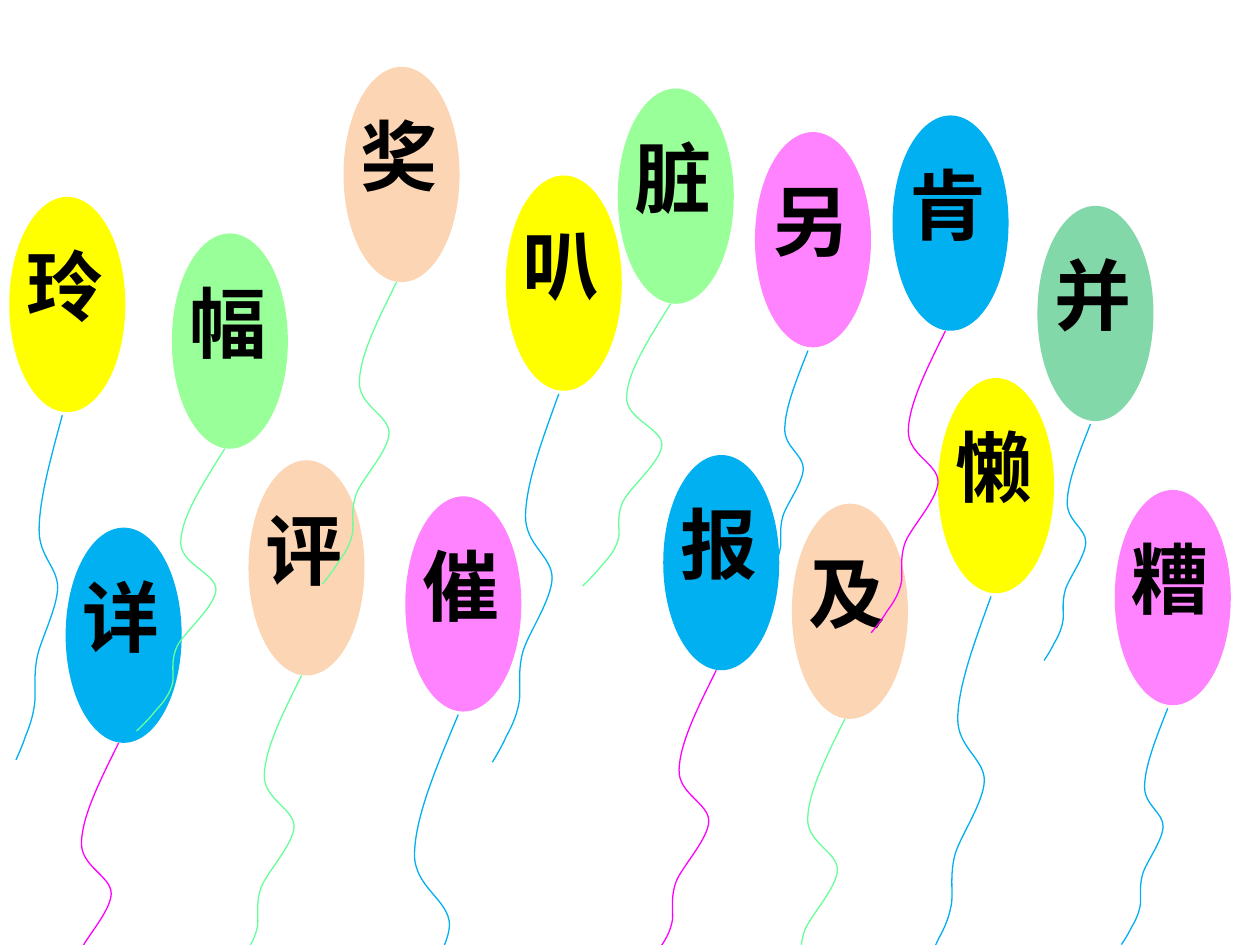
from dataclasses import dataclass

from lxml.etree import SubElement
from pptx import Presentation
from pptx.dml.color import RGBColor
from pptx.enum.shapes import MSO_SHAPE
from pptx.enum.text import MSO_AUTO_SIZE
from pptx.oxml.ns import qn
from pptx.slide import Slide
from pptx.util import Pt

COLORS = {
    "yellow": "FFFF00", "blue": "00B0F0", "peach": "FCD5B5", "lime": "99FF99",
    "magenta": "FF00FF", "green": "00B050", "mint": "66FF99", "black": "000000",
}
TRANSLUCENT = ("magenta", "green")
STRING_CURVE = [
    (1, 0), (0.76, 0.12), (0.51, 0.24), (0.5, 0.33), (0.49, 0.41), (0.9, 0.44), (0.9, 0.5),
    (0.89, 0.56), (0.54, 0.65), (0.46, 0.7), (0.37, 0.76), (0.44, 0.81), (0.4, 0.84),
    (0.36, 0.88), (0.27, 0.91), (0.21, 0.93), (0.14, 0.96), (0, 1), (0, 1),
]
STRINGS = {
    "short": (26.5, 135, 124.8), "narrow": (26.5, 197, 124.8), "long": (38, 210.5, 124.8),
    "longest": (50, 240.5, 124.8), "medium": (42.5, 172.6, 123), "wide": (50.4, 161.3, 123),
}
BALLOONS = [
    ("糟", 637, 280, "magenta", "short", "blue"),
    ("懒", 536, 216, "yellow", "long", "blue"),
    ("及", 452.5, 287.8, "peach", "medium", "mint"),
    ("肯", 510, 66, "blue", "medium", "magenta"),
    ("评", 142, 263, "peach", "medium", "mint"),
    ("详", 37.5, 301.5, "blue", "medium", "magenta"),
    ("催", 231.6, 283.6, "magenta", "longest", "blue"),
    ("并", 592.8, 117.6, "green", "short", "blue"),
    ("玲", 5.3, 112.5, "yellow", "narrow", "blue"),
    ("幅", 98.2, 133.4, "lime", "wide", "mint"),
    ("叭", 289, 100.3, "yellow", "long", "blue"),
    ("另", 431.4, 75.5, "magenta", "short", "blue"),
    ("脏", 353, 50.6, "lime", "wide", "mint"),
    ("奖", 196.3, 38.2, "peach", "medium", "mint"),
    ("报", 379, 260, "blue", "medium", "magenta"),
]


@dataclass
class BalloonPainter:
    """Draws balloons on a slide in one shared style."""

    page: Slide
    font: str = "Arial"
    size: float = 44
    width: float = 66.3
    height: float = 123
    knot: float = 30.3

    def ellipse(self, shapes, left, top, color):
        shape = shapes.add_shape(
            MSO_SHAPE.OVAL, Pt(left), Pt(top), Pt(self.width), Pt(self.height))
        shape.shadow.inherit = False
        shape.fill.solid()
        shape.fill.fore_color.rgb = RGBColor.from_string(COLORS[color])
        shape.line.fill.background()
        if color in TRANSLUCENT:
            tint = shape._element.spPr.find(qn("a:solidFill"))[0]
            SubElement(tint, qn("a:alpha"), val="49000")

    def character(self, shapes, left, top, text):
        box = shapes.add_textbox(Pt(left), Pt(top), Pt(85), Pt(60.5))
        frame = box.text_frame
        frame.word_wrap = True
        frame.auto_size = MSO_AUTO_SIZE.SHAPE_TO_FIT_TEXT
        para = frame.paragraphs[0]
        para.text = text
        para.font.name = self.font
        para.font.size = Pt(self.size)
        para.font.bold = True
        para.font.color.rgb = RGBColor.from_string(COLORS["black"])

    def string(self, shapes, left, top, width, height, color):
        points = [(Pt(left + x * width), Pt(top + y * height)) for x, y in STRING_CURVE]
        builder = shapes.build_freeform(*points[0])
        builder.add_line_segments(points[1:], close=False)
        shape = builder.convert_to_shape()
        shape.shadow.inherit = False
        shape.fill.background()
        shape.line.color.rgb = RGBColor.from_string(COLORS[color])
        shape.line.width = Pt(0.75)
        self.bend(shape)

    def bend(self, shape):
        outline = next(shape._element.iter(qn("a:path")))
        lines = outline.findall(qn("a:lnTo"))
        for start in range(0, len(lines), 3):
            curve = SubElement(outline, qn("a:cubicBezTo"))
            for line in lines[start:start + 3]:
                curve.append(line[0])
                outline.remove(line)

    def balloon(self, text, left, top, color, string, string_color):
        shapes = self.page.shapes.add_group_shape().shapes
        width, height, drop = STRINGS[string]
        self.ellipse(shapes, left, top, color)
        self.character(shapes, left + 2.7, top + 20.4, text)
        self.string(shapes, left + self.knot - width, top + drop, width, height, string_color)


def main():
    deck = Presentation()
    deck.slide_width, deck.slide_height = Pt(720), Pt(540)
    painter = BalloonPainter(deck.slides.add_slide(deck.slide_layouts[6]))
    for balloon in BALLOONS:
        painter.balloon(*balloon)
    deck.save("out.pptx")


if __name__ == "__main__":
    main()
